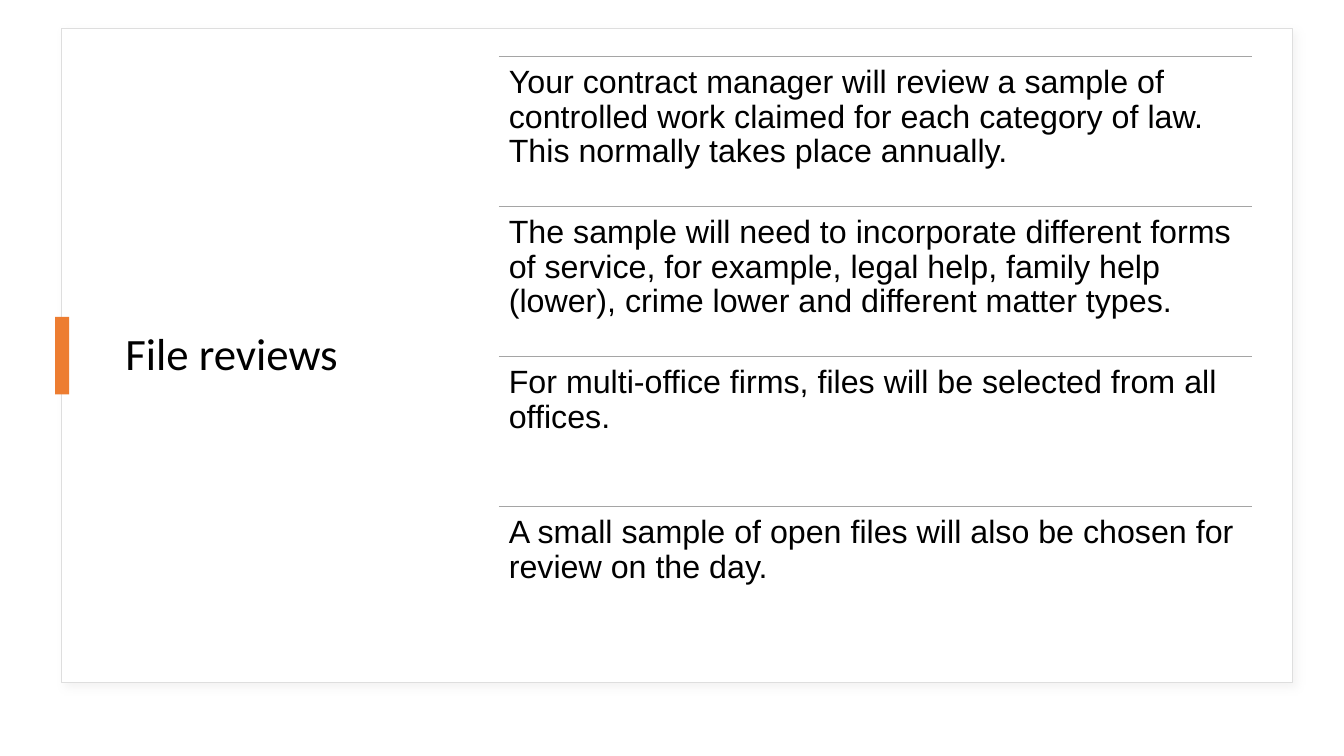
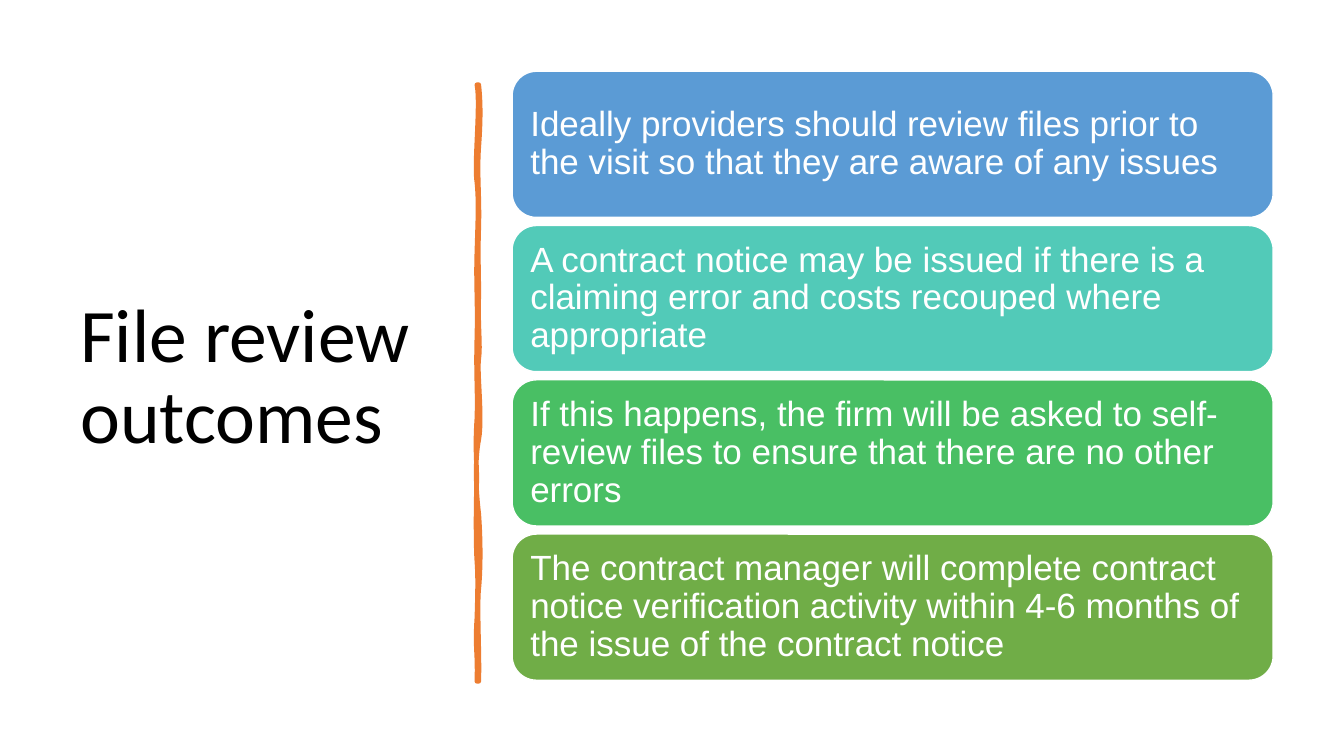
"""Builds two slides on file reviews and their outcomes."""
from lxml import etree
from pptx import Presentation
from pptx.dml.color import RGBColor
from pptx.enum import shapes, text
from pptx.oxml import ns
from pptx.util import Pt

BLACK = RGBColor(0x00, 0x00, 0x00)
WHITE = RGBColor(0xFF, 0xFF, 0xFF)
ORANGE = RGBColor(0xED, 0x7D, 0x31)
GREY = RGBColor(0xA5, 0xA5, 0xA5)
CARD_EDGE = RGBColor(0xDE, 0xDE, 0xDE)
BLUE = RGBColor(0x5B, 0x9B, 0xD5)
TEAL = RGBColor(0x52, 0xCA, 0xB8)
GREEN = RGBColor(0x49, 0xBF, 0x64)
OLIVE = RGBColor(0x70, 0xAD, 0x47)

BODY_FONT = "Arial"
TITLE_FONT = "Calibri"


def write(holder, words, size, color=BLACK, font=BODY_FONT,
          anchor=text.MSO_ANCHOR.MIDDLE, side=7.2, top=7.2):
    frame = holder.text_frame
    frame.word_wrap = True
    frame.vertical_anchor = anchor
    frame.margin_left = frame.margin_right = Pt(side)
    frame.margin_top, frame.margin_bottom = Pt(top), Pt(7.2)
    paragraph = frame.paragraphs[0]
    paragraph.alignment = text.PP_ALIGN.LEFT
    paragraph.line_spacing = 0.9
    run = paragraph.add_run()
    run.text = words
    run.font.size = Pt(size)
    run.font.name = font
    run.font.color.rgb = color


def paint(shape, fill, edge=None, width=1):
    shape.shadow.inherit = False
    shape.fill.solid()
    shape.fill.fore_color.rgb = fill
    if edge is None:
        shape.line.fill.background()
    else:
        shape.line.color.rgb = edge
        shape.line.width = Pt(width)


deck = Presentation()
deck.slide_width, deck.slide_height = Pt(960), Pt(540)
blank = deck.slide_layouts[6]

reviews = deck.slides.add_slide(blank).shapes
card = reviews.add_shape(shapes.MSO_SHAPE.RECTANGLE, Pt(44), Pt(20.2), Pt(879.3), Pt(467.3))
paint(card, WHITE, CARD_EDGE)
effects = card._element.spPr.find(ns.qn("a:effectLst"))
shadow = etree.SubElement(effects, ns.qn("a:outerShdw"), blurRad=str(Pt(6)),
                          dist=str(Pt(4)), dir="2700000", algn="tl", rotWithShape="0")
shade = etree.SubElement(shadow, ns.qn("a:srgbClr"), val="C5C3C3")
etree.SubElement(shade, ns.qn("a:alpha"), val="20000")

heading = reviews.add_textbox(Pt(82.5), Pt(40.2), Pt(235.4), Pt(428.4))
write(heading, "File reviews", 32, font=TITLE_FONT)
marker = reviews.add_shape(shapes.MSO_SHAPE.RECTANGLE, Pt(39.4), Pt(226.3), Pt(10), Pt(55.4))
paint(marker, ORANGE)

review_points = [
    "Your contract manager will review a sample of controlled work claimed for each "
    "category of law. This normally takes place annually.",
    "The sample will need to incorporate different forms of service, for example, legal "
    "help, family help (lower), crime lower and different matter types.",
    "For multi-office firms, files will be selected from all offices.",
    "A small sample of open files will also be chosen for review on the day.",
]
ROW_LEFT, ROW_TOP, ROW_WIDTH, ROW_HEIGHT = 356.4, 40.2, 537.8, 107.15
for index, point in enumerate(review_points):
    top = Pt(ROW_TOP + index * ROW_HEIGHT)
    rule = reviews.add_connector(shapes.MSO_CONNECTOR.STRAIGHT, Pt(ROW_LEFT), top,
                                 Pt(ROW_LEFT + ROW_WIDTH), top)
    rule.line.color.rgb = GREY
    rule.line.width = Pt(1)
    etree.SubElement(rule._element.spPr, ns.qn("a:effectLst"))
    row = reviews.add_textbox(Pt(ROW_LEFT), top, Pt(ROW_WIDTH), Pt(ROW_HEIGHT))
    write(row, point, 23, anchor=text.MSO_ANCHOR.TOP, top=6.7)

outcomes = deck.slides.add_slide(blank).shapes
heading = outcomes.add_textbox(Pt(50.3), Pt(50.4), Pt(269.3), Pt(440))
write(heading, "File review outcomes", 54, font=TITLE_FONT)

STROKE_START = (342, 60.5)
STROKE_LEFT, STROKE_TOP = 340.6, 60.5
stroke_curves = [
    ((343.4, 73.4), (343.4, 85.7), (342, 105.1)),
    ((340.6, 124.6), (342.7, 140.4), (342, 162.7)),
    ((341.3, 185), (342, 188.6), (342, 211.7)),
    ((341.3, 234), (343.4, 246.2), (342, 256.3)),
    ((340.6, 266.4), (344.9, 298.1), (342, 313.9)),
    ((339.1, 329), (339.8, 348.5), (342, 367.2)),
    ((343.4, 385.9), (343.4, 406.1), (342, 420.5)),
    ((340.6, 434.2), (342.7, 468), (342, 486.7)),
    ((341.3, 486.7), (340.6, 486.7), (340.6, 486.7)),
    ((341.3, 465.1), (339.1, 463.7), (340.6, 441.4)),
    ((341.3, 419.8), (341.3, 410.4), (340.6, 401)),
    ((339.8, 391.7), (339.8, 356.4), (340.6, 343.4)),
    ((340.6, 330.5), (339.1, 320.4), (340.6, 298.8)),
    ((341.3, 277.9), (339.8, 268.6), (340.6, 241.2)),
    ((341.3, 214.6), (339.8, 202.3), (340.6, 180)),
    ((341.3, 157), (342, 144), (340.6, 130.3)),
    ((338.4, 117.4), (343.4, 74.9), (340.6, 60.5)),
]
brush = outcomes.build_freeform(Pt(STROKE_START[0]), Pt(STROKE_START[1]), scale=1.0)
brush.add_line_segments([(Pt(x), Pt(y)) for _, _, (x, y) in stroke_curves], close=True)
divider = brush.convert_to_shape()
paint(divider, ORANGE, ORANGE, 3.25)
segments = list(divider._element.iter(ns.qn("a:lnTo")))
for segment, curve in zip(segments, stroke_curves):
    bend = etree.Element(ns.qn("a:cubicBezTo"))
    for x, y in curve:
        etree.SubElement(bend, ns.qn("a:pt"), x=str(Pt(x) - Pt(STROKE_LEFT)),
                         y=str(Pt(y) - Pt(STROKE_TOP)))
    segment.getparent().replace(segment, bend)
etree.SubElement(divider._element.spPr.find(ns.qn("a:ln")), ns.qn("a:round"))

outcome_points = [
    (BLUE, "Ideally providers should review files prior to the visit so that they are aware "
           "of any issues"),
    (TEAL, "A contract notice may be issued if there is a claiming error and costs recouped "
           "where appropriate"),
    (GREEN, "If this happens, the firm will be asked to self-review files to ensure that "
            "there are no other errors"),
    (OLIVE, "The contract manager will complete contract notice verification activity within "
            "4-6 months of the issue of the contract notice"),
]
PANEL_TOP, PANEL_HEIGHT, PANEL_STEP = 50.9, 104.4, 110.2
for index, (fill, point) in enumerate(outcome_points):
    panel = outcomes.add_shape(shapes.MSO_SHAPE.ROUNDED_RECTANGLE, Pt(365.8),
                               Pt(PANEL_TOP + index * PANEL_STEP), Pt(543.6), Pt(PANEL_HEIGHT))
    paint(panel, fill, WHITE)
    write(panel, point, 25, WHITE, side=7.9)

deck.save("out.pptx")
